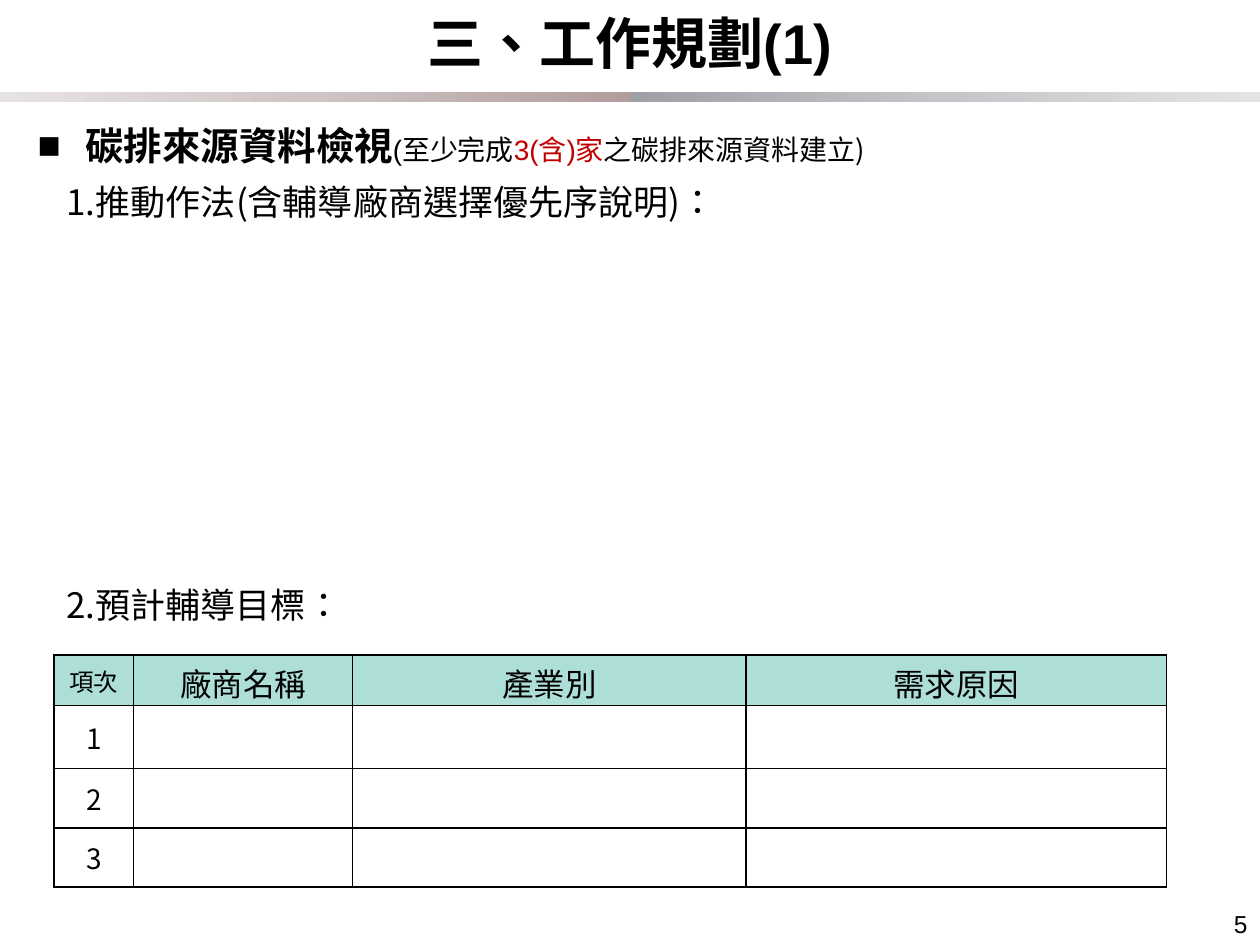
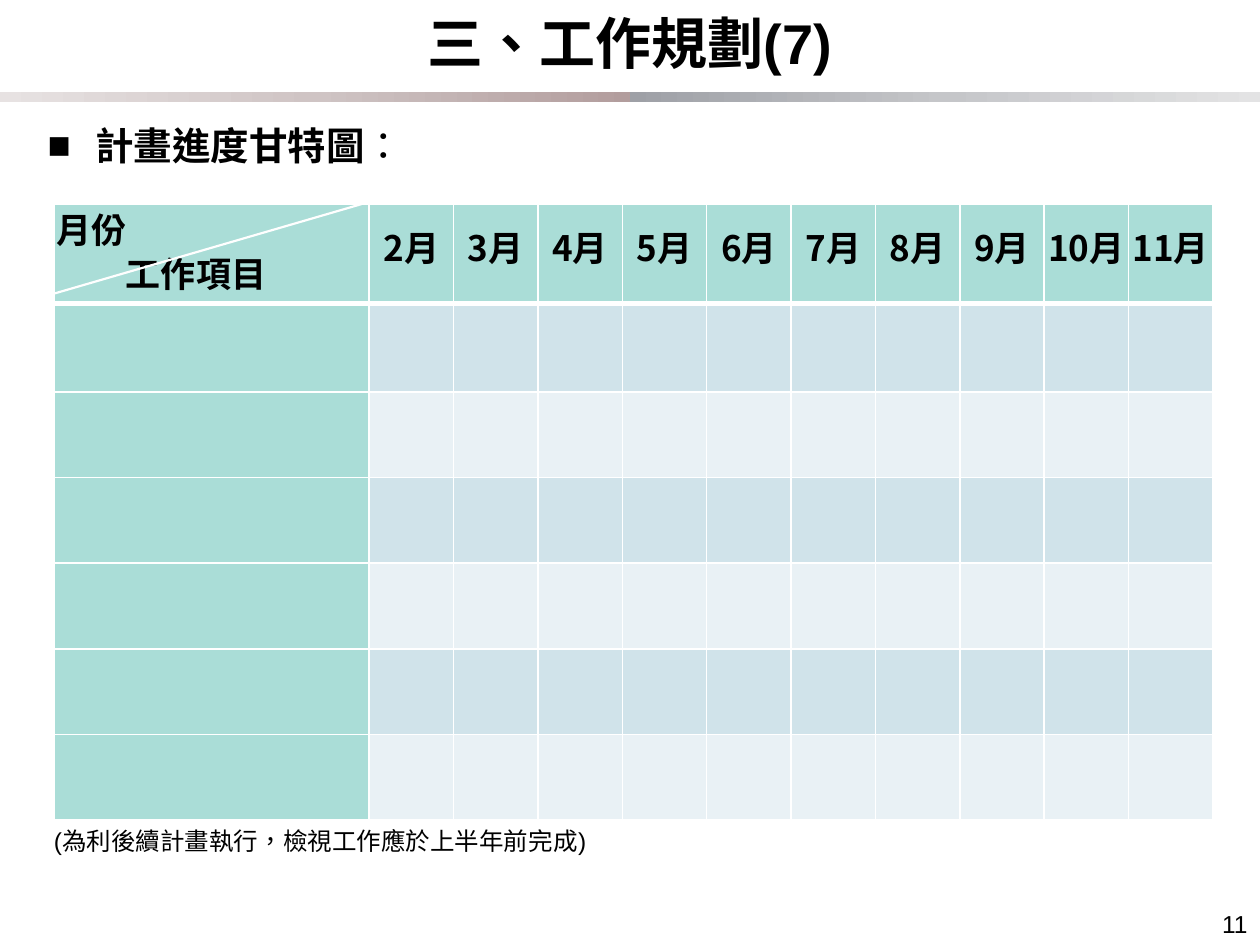
from lxml import etree
from pptx import Presentation
from pptx import util as u
from pptx.dml.color import RGBColor
from pptx.enum import lang, shapes, text
from pptx.oxml import ns

BLACK = RGBColor(0x00, 0x00, 0x00)
WHITE = RGBColor(0xFF, 0xFF, 0xFF)
RED = RGBColor(0xC0, 0x00, 0x00)
TEAL = RGBColor(0x68, 0xC3, 0xB8)
BAND_ROWS = (RGBColor(0xD0, 0xE3, 0xEA), RGBColor(0xE9, 0xF1, 0xF5))
ROSE_FADE = ("B29D9D", "CFC4C4", "E7E2E2")
GREY_FADE = ("9EA0A6", "C5C6C9", "E3E3E4")
ARIAL = "Arial"
NOTO = "Noto Sans CJK SC"
LEFT = 0.43  # left edge shared by tables and numbered points


def add_element(parent, tag, **attributes):
    return etree.SubElement(parent, ns.qn(tag), attributes)


def add_span(para, words, size, bold=False, color=BLACK, face=ARIAL):
    span = para.add_run()
    span.text = words
    font = span.font
    font.size, font.bold, font.name = u.Pt(size), bold, face
    font.color.rgb = color
    font.language_id = lang.MSO_LANGUAGE_ID.TRADITIONAL_CHINESE
    add_element(span._r.get_or_add_rPr(), "a:ea", typeface=NOTO)


def add_box(page, left, top, width, height, anchor=text.MSO_ANCHOR.TOP):
    """Add a wrapping text box and return its first paragraph."""
    box = page.shapes.add_textbox(*map(u.Inches, (left, top, width, height)))
    box.text_frame.word_wrap = True
    box.text_frame.vertical_anchor = anchor
    return box.text_frame.paragraphs[0]


# Frame shared by both slides

def add_fade(page, left, colors, angle):
    band = page.shapes.add_shape(shapes.MSO_SHAPE.RECTANGLE, u.Inches(left),
                                 u.Inches(0.73), u.Inches(5), u.Inches(0.08))
    band.shadow.inherit = False
    band.line.fill.background()
    band.fill.gradient()
    band.fill.gradient_angle = angle
    stops = band._element.spPr.find(".//" + ns.qn("a:gsLst"))
    for stop in list(stops):
        stops.remove(stop)
    for position, color in zip((0, 50000, 100000), colors):
        stop = add_element(stops, "a:gs", pos=str(position))
        add_element(stop, "a:srgbClr", val=color)


def add_frame(deck, title, number):
    page = deck.slides.add_slide(deck.slide_layouts[6])
    add_fade(page, 0, ROSE_FADE, 180)
    add_fade(page, 5, GREY_FADE, 0)
    para = add_box(page, 0, 0.13, 10, 0.52, text.MSO_ANCHOR.MIDDLE)
    para.alignment = text.PP_ALIGN.CENTER
    para.line_spacing = u.Pt(30)
    add_span(para, title, 32, bold=True)
    para = add_box(page, 7.67, 6.98, 2.33, 0.52, text.MSO_ANCHOR.BOTTOM)
    para.alignment = text.PP_ALIGN.RIGHT
    add_span(para, number, 14)
    return page


def add_heading(page, left, top, words):
    para = add_box(page, left, top, 9.61, 0.47)
    properties = para._p.get_or_add_pPr()
    indent = u.Inches(0.38)
    properties.set("marL", str(indent))
    properties.set("indent", str(-indent))
    add_element(properties, "a:buFont", typeface=ARIAL)
    add_element(properties, "a:buChar", char="■")
    add_span(para, words, 22, bold=True)
    return para


# Tables

def add_grid(page, left, top, widths, heights):
    frame = page.shapes.add_table(len(heights), len(widths), u.Inches(left), u.Inches(top),
                                  u.Inches(sum(widths)), u.Inches(sum(heights)))
    table = frame.table
    table.first_row = table.horz_banding = False
    for column, width in zip(table.columns, widths):
        column.width = u.Inches(width)
    for row, height in zip(table.rows, heights):
        row.height = u.Inches(height)
    return table


def style_cell(cell, fill, border, alpha=None, bottom=1, top=1):
    properties = cell._tc.get_or_add_tcPr()
    for side, points in (("L", 1), ("R", 1), ("T", top), ("B", bottom)):
        line = add_element(properties, "a:ln" + side, w=str(u.Pt(points)))
        solid = add_element(line, "a:solidFill")
        add_element(solid, "a:srgbClr", val=str(border))
    cell.fill.solid()
    cell.fill.fore_color.rgb = fill
    if alpha:
        color = properties.find(ns.qn("a:solidFill") + "/" + ns.qn("a:srgbClr"))
        add_element(color, "a:alpha", val=str(alpha * 1000))
    cell.vertical_anchor = text.MSO_ANCHOR.MIDDLE


def set_margins(cell, side, top, bottom):
    cell.margin_left = cell.margin_right = u.Inches(side)
    cell.margin_top, cell.margin_bottom = u.Inches(top), u.Inches(bottom)


def add_target_table(page, left, top):
    headers = ("項次", "廠商名稱", "產業別", "需求原因")
    table = add_grid(page, left, top, (0.63, 1.74, 3.12, 3.34), (0.4, 0.5, 0.47, 0.47))
    for column, header in enumerate(headers):
        cell = table.cell(0, column)
        style_cell(cell, TEAL, BLACK, alpha=54)
        set_margins(cell, 0.05, 0.04 if column else 0, 0)
        para = cell.text_frame.paragraphs[0]
        para.alignment = text.PP_ALIGN.CENTER
        add_span(para, header, 18 if column else 14, face=NOTO)
    for row in range(1, 4):
        for column in range(len(headers)):
            style_cell(table.cell(row, column), WHITE, BLACK)
        para = table.cell(row, 0).text_frame.paragraphs[0]
        para.alignment = text.PP_ALIGN.CENTER
        add_span(para, str(row), 16, face=NOTO)


def add_gantt_table(page, left, top):
    months = [f"{month}月" for month in range(2, 12)]
    item_width = 2.5
    table = add_grid(page, left, top, [item_width] + [0.67] * len(months),
                     [0.79, 0.7] + [0.68] * 5)

    # Header row: split corner cell, then the months
    corner = table.cell(0, 0)
    corner.text_frame.add_paragraph()
    for para, words in zip(corner.text_frame.paragraphs, ("月份", "工作項目")):
        para.line_spacing = u.Pt(25)
        add_span(para, words, 20, bold=True, face=NOTO)
    para._p.get_or_add_pPr().set("marL", str(u.Inches(0.55)))
    for column, month in enumerate(months, 1):
        para = table.cell(0, column).text_frame.paragraphs[0]
        para.alignment = text.PP_ALIGN.CENTER
        para.line_spacing = u.Pt(20)
        add_span(para, month, 20, bold=True, face=NOTO)
    for cell in table.rows[0].cells:
        style_cell(cell, TEAL, WHITE, alpha=56, bottom=3)
        set_margins(cell, 0.02, 0, 0)

    # Empty rows for the work items
    for row in range(1, len(table.rows)):
        edge = 3 if row == 1 else 1
        style_cell(table.cell(row, 0), TEAL, WHITE, alpha=56, top=edge)
        for column in range(1, len(months) + 1):
            style_cell(table.cell(row, column), BAND_ROWS[(row - 1) % 2], WHITE, top=edge)

    # Diagonal across the corner cell
    diagonal = page.shapes.add_connector(
        shapes.MSO_CONNECTOR.STRAIGHT, u.Inches(left + 2.44), u.Inches(top),
        u.Inches(left), u.Inches(top + 0.71))
    diagonal.line.color.rgb = WHITE
    diagonal.line.width = u.Pt(1.25)
    add_element(diagonal._element.spPr, "a:effectLst")


# Slides

def build_review_slide(deck):
    page = add_frame(deck, "三、工作規劃(1)", "5")
    para = add_heading(page, 0.2, 0.92, "碳排來源資料檢視")
    add_span(para, "(至少完成", 16)
    add_span(para, "3(含)家", 16, color=RED)
    add_span(para, "之碳排來源資料建立", 16)
    add_span(para, ")", 16, face=NOTO)
    for top, words in ((1.38, "1.推動作法(含輔導廠商選擇優先序說明)："),
                       (4.58, "2.預計輔導目標：")):
        add_span(add_box(page, LEFT, top, 5.83, 0.44), words, 20, face=NOTO)
    add_target_table(page, LEFT, 5.2)


def build_schedule_slide(deck):
    page = add_frame(deck, "三、工作規劃(7)", "11")
    para = add_heading(page, 0.28, 0.92, "計畫進度甘特圖")
    add_span(para, "：", 22)
    add_gantt_table(page, LEFT, 1.62)
    note = add_box(page, LEFT - 0.1, 6.51, 5.01, 0.34)
    add_span(note, "(為利後續計畫執行，檢視工作應於上半年前完成)", 14)


def main():
    deck = Presentation()
    deck.slide_width, deck.slide_height = u.Inches(10), u.Inches(7.5)
    build_review_slide(deck)
    build_schedule_slide(deck)
    deck.save("out.pptx")


if __name__ == "__main__":
    main()
